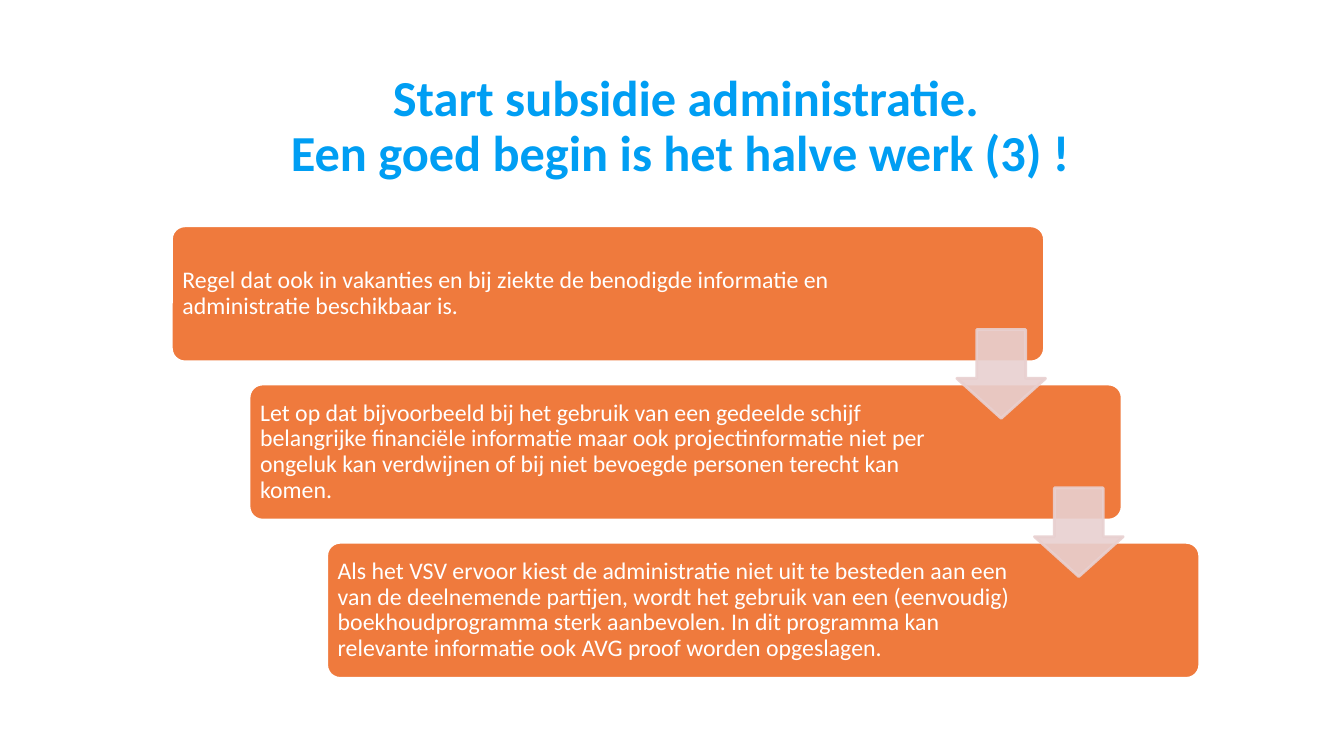
from lxml import etree
from pptx import Presentation
from pptx.dml.color import RGBColor
from pptx.enum.shapes import MSO_SHAPE
from pptx.enum.text import MSO_ANCHOR, PP_ALIGN
from pptx.oxml.ns import qn
from pptx.util import Inches, Pt

COLORS = {"title": "009EF3", "step": "EF7A3D", "white": "FFFFFF", "arrow": "E8D0D0"}


def add_text(text, left, top, width, height, size, color, bold=False,
             align=PP_ALIGN.LEFT, inset=0):
    tf = s.shapes.add_textbox(Inches(left), Inches(top), Inches(width), Inches(height)).text_frame
    tf.word_wrap = True
    tf.vertical_anchor = MSO_ANCHOR.MIDDLE
    tf.margin_left = tf.margin_right = tf.margin_top = tf.margin_bottom = Inches(inset)
    p = tf.paragraphs[0]
    p.text = text
    p.alignment = align
    p.line_spacing = 0.9
    for r in p.runs:
        r.font.name = "Calibri"
        r.font.size = Pt(size)
        r.font.bold = bold
        r.font.color.rgb = RGBColor.from_string(COLORS[color])


def add_box(kind, left, top, width, height, adjustments, fill, line, opacity=100):
    sp = s.shapes.add_shape(kind, Inches(left), Inches(top), Inches(width), Inches(height))
    sp.shadow.inherit = False
    for i, value in enumerate(adjustments):
        sp.adjustments[i] = value
    sp.fill.solid()
    sp.fill.fore_color.rgb = RGBColor.from_string(COLORS[fill])
    sp.line.color.rgb = RGBColor.from_string(COLORS[line])
    sp.line.width = Pt(2)
    if opacity < 100:
        for clr in sp.element.spPr.iter(qn("a:srgbClr")):
            etree.SubElement(clr, qn("a:alpha"), val=str(opacity * 1000))


prs = Presentation()
prs.slide_width = Inches(13.33)
prs.slide_height = Inches(7.5)
s = prs.slides.add_slide(prs.slide_layouts[6])

# Title
add_text("Start subsidie administratie.\vEen goed begin is het halve werk (3) ! ",
         1.7, 1.05, 10.21, 0.43, size=36, color="title", bold=True, align=PP_ALIGN.CENTER)

# Staircase of steps: text and text width
steps = [
    ("Regel dat ook in vakanties en bij ziekte de benodigde informatie en "
     "administratie beschikbaar is.", 7.2),
    ("Let op dat bijvoorbeeld bij het gebruik van een gedeelde schijf belangrijke "
     "financiële informatie maar ook projectinformatie niet per ongeluk kan verdwijnen "
     "of bij niet bevoegde personen terecht kan komen.", 6.94),
    ("Als het VSV ervoor kiest de administratie niet uit te besteden aan een van de "
     "deelnemende partijen, wordt het gebruik van een (eenvoudig) boekhoudprogramma "
     "sterk aanbevolen. In dit programma kan relevante informatie ook AVG proof worden "
     "opgeslagen.", 6.94),
]
STEP_X, STEP_Y = 0.77, 1.57
for i, (text, width) in enumerate(steps):
    left, top = 1.7 + i * STEP_X, 2.24 + i * STEP_Y
    add_box(MSO_SHAPE.ROUNDED_RECTANGLE, left, top, 8.66, 1.35, [0.1], "step", "white")
    add_text(text, left + 0.04, top + 0.04, width, 1.27, size=17, color="white", inset=0.07)

# Arrows between the steps
for i in range(len(steps) - 1):
    add_box(MSO_SHAPE.DOWN_ARROW, 9.49 + i * STEP_X, 3.27 + i * STEP_Y, 0.88, 0.88,
            [0.55, 0.45], "arrow", "arrow", opacity=90)

prs.save("out.pptx")
